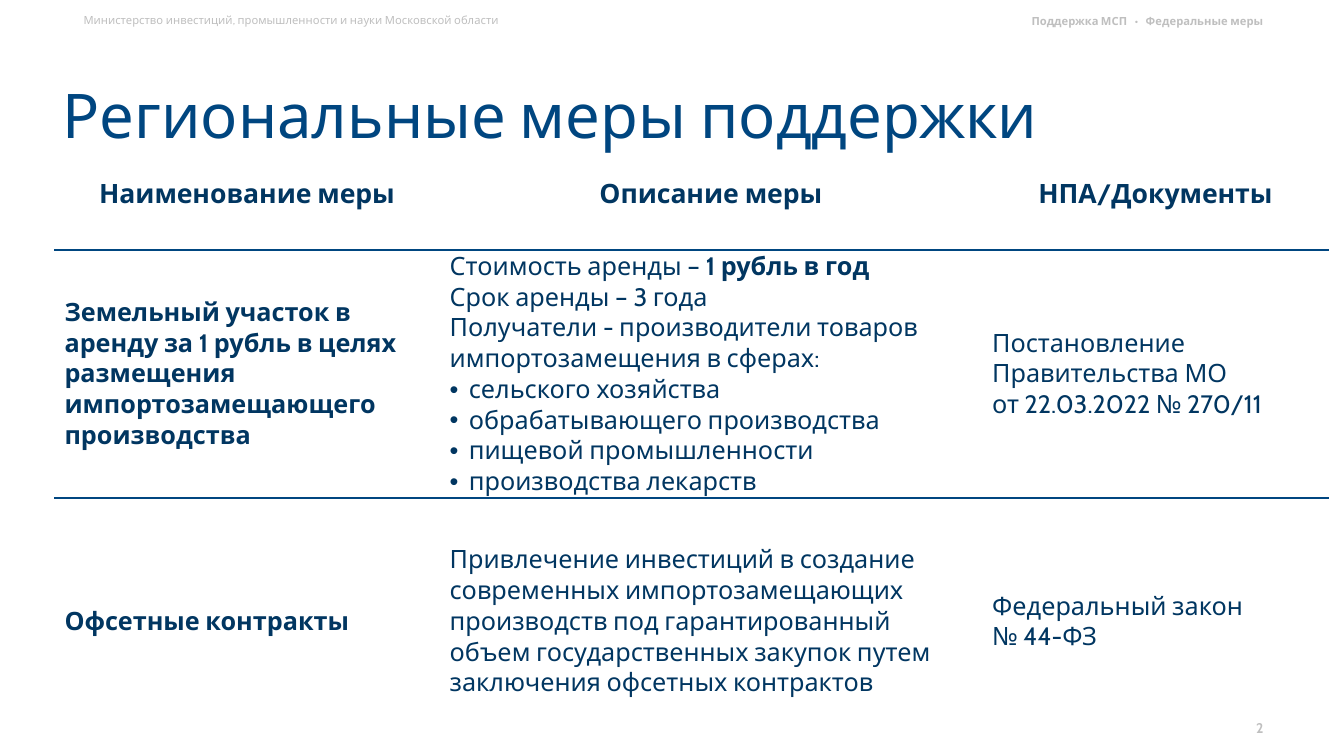
from lxml import etree
from pptx import Presentation
from pptx.dml.color import RGBColor
from pptx.enum.text import MSO_ANCHOR, MSO_AUTO_SIZE, PP_ALIGN
from pptx.oxml.ns import qn
from pptx.util import Pt

PX = 9144  # 100 px to the inch
FONT = "Cabin"
COLORS = {"title": "004680", "text": "013661", "muted": "BFBFBF"}
LEFT, CENTER, RIGHT, JUSTIFY = PP_ALIGN.LEFT, PP_ALIGN.CENTER, PP_ALIGN.RIGHT, PP_ALIGN.JUSTIFY
TOP, MIDDLE = MSO_ANCHOR.TOP, MSO_ANCHOR.MIDDLE
BULLET = "• "


def write(tf, lines, size, color, bold=False, align=LEFT):
    """Fill a text frame; a line is a string or a list of (text, bold) runs."""
    for i, line in enumerate(lines):
        p = tf.paragraphs[0] if i == 0 else tf.add_paragraph()
        p.alignment = align
        runs = [(line, bold)] if isinstance(line, str) else line
        if runs[0][0].startswith(BULLET):
            runs = [(runs[0][0].removeprefix(BULLET), bold)]
            pPr = p._p.get_or_add_pPr()
            pPr.set("marL", str(19 * PX))
            pPr.set("indent", str(-19 * PX))
            etree.SubElement(pPr, qn("a:buFont")).set("typeface", "Arial")
            etree.SubElement(pPr, qn("a:buChar")).set("char", BULLET.strip())
        for text, is_bold in runs:
            for n, part in enumerate(text.split("\n")):
                if n:
                    p.add_line_break()
                r = p.add_run()
                r.text = part
                for name, value in {"name": FONT, "size": Pt(size), "bold": is_bold}.items():
                    setattr(r.font, name, value)
                r.font.color.rgb = RGBColor.from_string(COLORS[color])


def set_borders(cell, visible):
    """Draw the sides named in visible, such as "TB", and hide the others."""
    tcPr = cell._tc.get_or_add_tcPr()
    for side in "LRTB":
        ln = etree.SubElement(tcPr, qn(f"a:ln{side}"), w=str(Pt(1)))
        if side in visible:
            fill = etree.SubElement(ln, qn("a:solidFill"))
            etree.SubElement(fill, qn("a:srgbClr"), val=COLORS["title"])
        else:
            etree.SubElement(ln, qn("a:noFill"))


prs = Presentation()
prs.slide_width, prs.slide_height = 1333 * PX, 750 * PX
s = prs.slides.add_slide(prs.slide_layouts[5])

# Running header and page number
LABELS = [
    ((73, 8, 565, 24), "Министерство инвестиций, промышленности и науки Московской области",
     8, False, LEFT, TOP),
    ((963, 710, 300, 25), "2", 10, True, RIGHT, MIDDLE),
    ((813, 12, 450, 18), "Поддержка МСП   •   Федеральные меры", 8, True, RIGHT, MIDDLE),
]
for box, text, size, bold, align, anchor in LABELS:
    tf = s.shapes.add_textbox(*(v * PX for v in box)).text_frame
    tf.word_wrap = True
    tf.vertical_anchor = anchor
    write(tf, [text], size, "muted", bold, align)

# Title
title = s.shapes.title
title.left, title.top, title.width, title.height = (v * PX for v in (52, 45, 1194, 145))
tf = title.text_frame
for name, value in {"word_wrap": True, "vertical_anchor": MIDDLE,
                    "auto_size": MSO_AUTO_SIZE.NONE}.items():
    setattr(tf, name, value)
write(tf, ["Региональные меры поддержки"], 44, "title")
tf.paragraphs[0].line_spacing = 0.9

# Table of support measures
COLUMNS = [382, 538, 344]
ROWS = [110, 246, 245]
BORDERS = ["B", "TB", "T"]
CELLS = [
    [["Наименование меры"], ["Описание меры"], ["НПА/Документы"]],
    [
        ["Земельный участок в аренду за 1 рубль в целях размещения "
         "импортозамещающего производства"],
        [
            [("Стоимость аренды – ", False), ("1 рубль в год", True)],
            "Срок аренды – 3 года",
            "Получатели - производители товаров импортозамещения в сферах:",
            "• сельского хозяйства",
            "• обрабатывающего производства",
            "• пищевой промышленности",
            "• производства лекарств",
        ],
        ["Постановление Правительства МО\nот 22.03.2022 № 270/11"],
    ],
    [
        ["Офсетные контракты"],
        ["Привлечение инвестиций в создание современных импортозамещающих "
         "производств под гарантированный объем государственных закупок путем "
         "заключения офсетных контрактов"],
        ["Федеральный закон", "№ 44-ФЗ"],
    ],
]
table = s.shapes.add_table(len(ROWS), len(COLUMNS), 54 * PX, 138 * PX,
                           sum(COLUMNS) * PX, sum(ROWS) * PX).table
table.first_row = table.horz_banding = False
for column, width in zip(table.columns, COLUMNS):
    column.width = width * PX
for i, (height, borders, row) in enumerate(zip(ROWS, BORDERS, CELLS)):
    table.rows[i].height = height * PX
    header = i == 0
    side, edge = (13, 7) if header else (10, 0)
    for j, lines in enumerate(row):
        cell = table.cell(i, j)
        set_borders(cell, borders)
        cell.fill.background()
        cell.vertical_anchor = MIDDLE
        cell.margin_left = cell.margin_right = side * PX
        cell.margin_top = cell.margin_bottom = edge * PX
        align = CENTER if header else JUSTIFY if (i, j) == (2, 2) else LEFT
        write(cell.text_frame, lines, 19 if header else 18, "text", header or j == 0, align)

prs.save("out.pptx")
